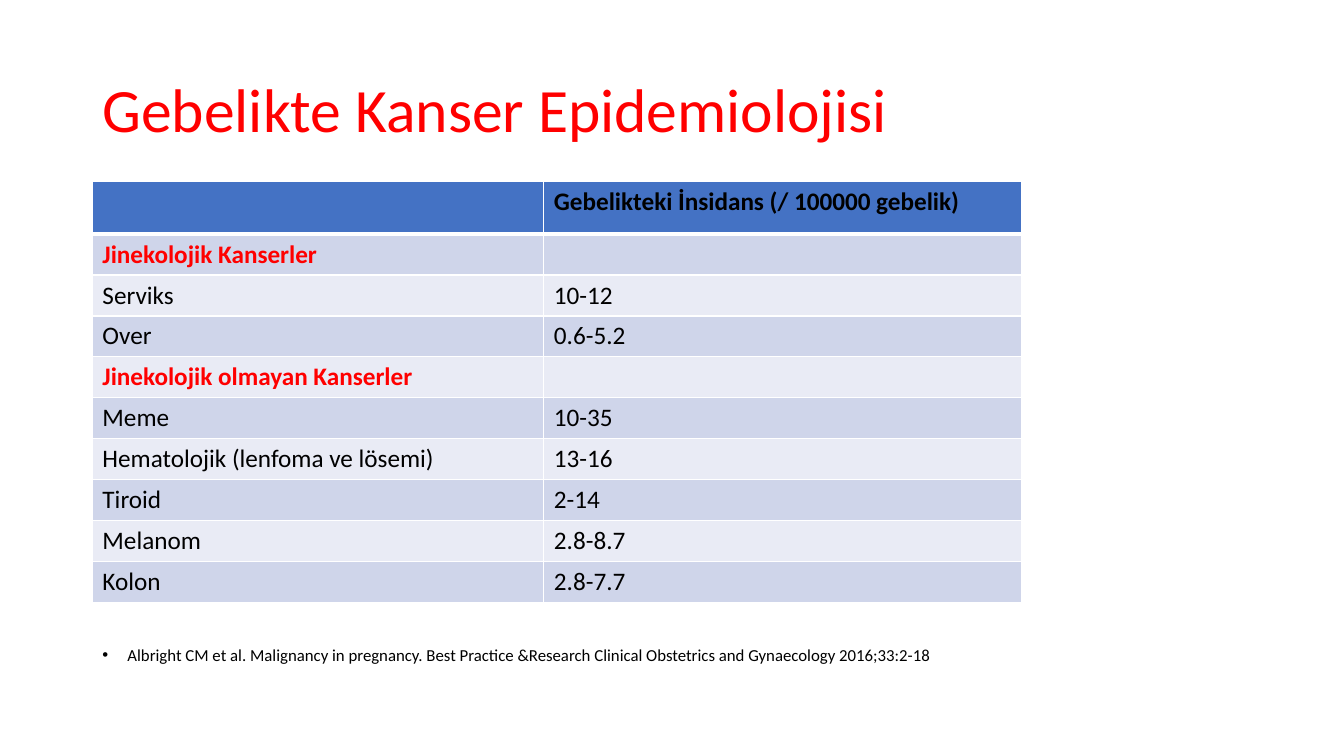
"""Builds a slide with a table of cancer incidence in pregnancy."""
import pptx
import pptx.dml.color
import pptx.enum.text
import pptx.oxml
import pptx.oxml.ns
import pptx.util
from lxml import etree

PX = 9525
FONT = "Calibri"
RED, BLACK, WHITE = "FF0000", "000000", "FFFFFF"
HEADER_FILL = "4472C4"
BAND_FILLS = ("CFD5EA", "E9EBF5")
COLUMN_WIDTHS = (430, 455)
HEADER_HEIGHT, ROW_HEIGHT = 50, 39
HEADER = ("", "Gebelikteki İnsidans (/ 100000 gebelik)")
GROUPS = {
    "Jinekolojik Kanserler": [("Serviks", "10-12"), ("Over", "0.6-5.2")],
    "Jinekolojik olmayan Kanserler": [
        ("Meme", "10-35"),
        ("Hematolojik (lenfoma ve lösemi)", "13-16"),
        ("Tiroid", "2-14"),
        ("Melanom", "2.8-8.7"),
        ("Kolon", "2.8-7.7"),
    ],
}
CITATION = ("Albright CM et al. Malignancy in pregnancy. Best Practice &Research "
            "Clinical Obstetrics and Gynaecology 2016;33:2-18")


def px(count):
    """Turn pixels into EMU."""
    return pptx.util.Emu(count * PX)


def color(value):
    """Turn a hex string into a colour."""
    return pptx.dml.color.RGBColor.from_string(value)


def write(frame, text, size=18, fill=BLACK, bold=False, spacing=1.0):
    """Write one formatted paragraph and return it."""
    para = frame.paragraphs[0]
    para.line_spacing = spacing
    span = para.add_run()
    span.text = text
    span.font.name = FONT
    span.font.size = pptx.util.Pt(size)
    span.font.bold = bold
    span.font.color.rgb = color(fill)
    return para


def add_title(page, text):
    """Place and fill the title placeholder."""
    title = page.shapes.title
    title.left, title.top, title.width, title.height = map(px, (88, 38, 1104, 139))
    title.text_frame.vertical_anchor = pptx.enum.text.MSO_ANCHOR.MIDDLE
    para = write(title.text_frame, text, size=44, fill=RED, spacing=0.9)
    para.alignment = pptx.enum.text.PP_ALIGN.LEFT


def set_borders(cell, bottom=1, top=1):
    """Draw white borders round a cell, with widths in points."""
    properties = cell._tc.get_or_add_tcPr()
    sides = (("lnL", 1), ("lnR", 1), ("lnT", top), ("lnB", bottom))
    for index, (side, width) in enumerate(sides):
        line = pptx.oxml.parse_xml(
            f'<a:{side} {pptx.oxml.ns.nsdecls("a")} w="{pptx.util.Pt(width)}">'
            f'<a:solidFill><a:srgbClr val="{WHITE}"/></a:solidFill></a:{side}>')
        properties.insert(index, line)


def fill_cell(cell, text, fill, bottom=1, top=1, **style):
    """Fill one table cell with colour, borders and text."""
    cell.fill.solid()
    cell.fill.fore_color.rgb = color(fill)
    set_borders(cell, bottom, top)
    if text:
        write(cell.text_frame, text, **style)


def add_incidence_table(page):
    """Add the table of cancers, grouped under red headings."""
    rows = [(HEADER, {"bold": True})]
    for heading, cancers in GROUPS.items():
        rows.append(((heading, ""), {"bold": True, "fill": RED}))
        rows += [(cancer, {}) for cancer in cancers]
    height = HEADER_HEIGHT + ROW_HEIGHT * (len(rows) - 1)
    frame = page.shapes.add_table(len(rows), len(COLUMN_WIDTHS), px(88), px(173),
                                  px(sum(COLUMN_WIDTHS)), px(height))
    table = frame.table
    for column, width in zip(table.columns, COLUMN_WIDTHS):
        column.width = px(width)
    for index, (texts, style) in enumerate(rows):
        table.rows[index].height = px(ROW_HEIGHT if index else HEADER_HEIGHT)
        background = BAND_FILLS[(index - 1) % 2] if index else HEADER_FILL
        for cell, text in zip(table.rows[index].cells, texts):
            text_style = dict(style)
            text_color = text_style.pop("fill", BLACK)
            fill_cell(cell, "", background, bottom=1 if index else 3,
                      top=3 if index == 1 else 1)
            if text:
                write(cell.text_frame, text, fill=text_color, **text_style)


def add_citation(page, text):
    """Add the bulleted source line under the table."""
    box = page.shapes.add_textbox(px(88), px(611), px(1104), px(28))
    box.text_frame.word_wrap = True
    para = write(box.text_frame, text, size=12, spacing=0.9)
    properties = para._p.get_or_add_pPr()
    properties.set("marL", str(px(24)))
    properties.set("indent", str(px(-24)))
    font = etree.SubElement(properties, pptx.oxml.ns.qn("a:buFont"))
    font.set("typeface", "Arial")
    bullet = etree.SubElement(properties, pptx.oxml.ns.qn("a:buChar"))
    bullet.set("char", "•")


def main():
    """Build and save the deck."""
    deck = pptx.Presentation()
    deck.slide_width, deck.slide_height = px(1280), px(720)
    page = deck.slides.add_slide(deck.slide_layouts[5])
    add_title(page, "Gebelikte Kanser Epidemiolojisi")
    add_incidence_table(page)
    add_citation(page, CITATION)
    deck.save("out.pptx")


if __name__ == "__main__":
    main()
